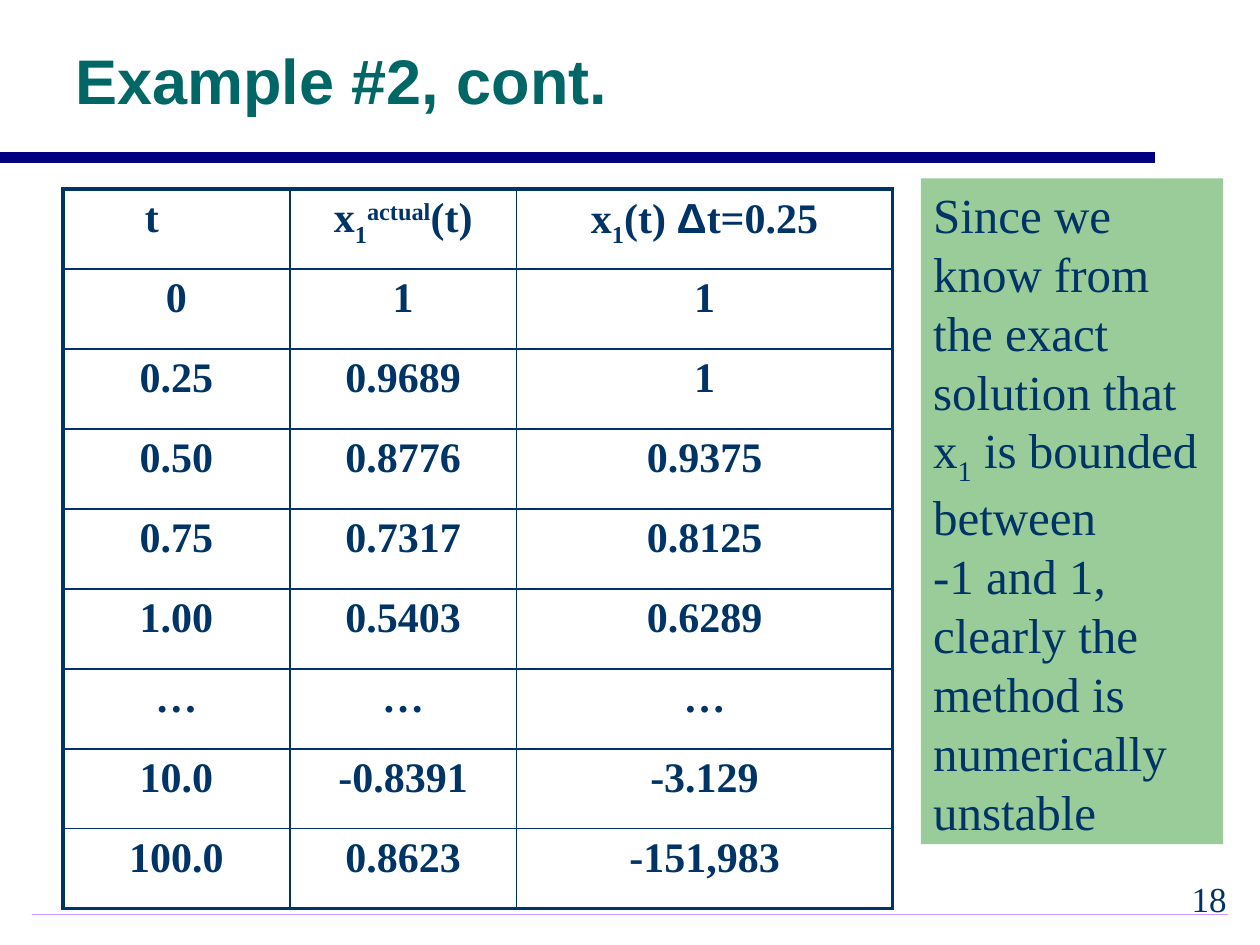
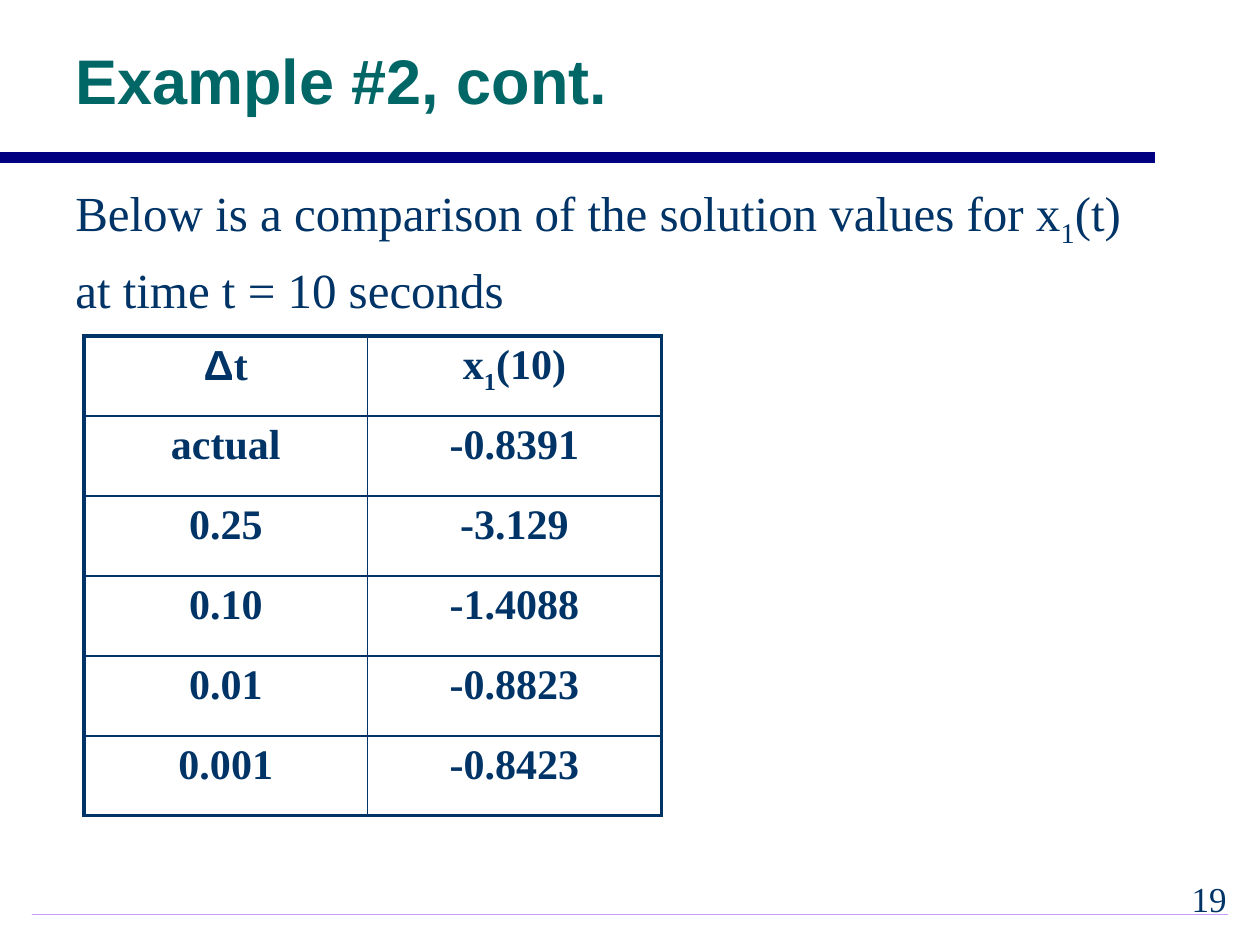
from lxml import etree
from pptx import Presentation
from pptx.dml.color import RGBColor
from pptx.enum.shapes import MSO_CONNECTOR, MSO_SHAPE
from pptx.enum.text import MSO_ANCHOR, PP_ALIGN
from pptx.oxml.ns import qn
from pptx.util import Inches, Pt

RECTANGLE = MSO_SHAPE.RECTANGLE
STRAIGHT = MSO_CONNECTOR.STRAIGHT
LEFT, CENTER, RIGHT = PP_ALIGN.LEFT, PP_ALIGN.CENTER, PP_ALIGN.RIGHT
TOP, MIDDLE = MSO_ANCHOR.TOP, MSO_ANCHOR.MIDDLE

INK = RGBColor(0x00, 0x33, 0x66)
TEAL = RGBColor(0x00, 0x66, 0x66)
NAVY = RGBColor(0x00, 0x00, 0x80)
LILAC = RGBColor(0xCC, 0x99, 0xFF)
PALE_LILAC = RGBColor(0xF3, 0xEB, 0xFF)
GREEN = RGBColor(0x99, 0xCC, 0x99)

SANS, SERIF = "Arial", "Times New Roman"
COLUMNS, ROWS = 120, 90
UNIT = Inches(10) / COLUMNS
TABLE_ROW = 7.62
THICK, THIN = 2.25, 1
SUB, SUPER = -25, 30

TITLE_BOX = (6, 1, 105, 14)
NUMBER_BOX = (93, 83, 25, 6)
FOOTER_BOX = (3, 87, 114, 0.12)
NOTE_BOX = (87.7, 17, 28.8, 63.4)
INTRO_BOX = (6, 16.8, 102.2, 12.4)

X1 = ["x", ("1", SUB)]
DELTA = ("Δ", 0, SANS)

SOLUTION_ROWS = [
    ["t\t", X1 + [("actual", SUPER), "(t)"], X1 + ["(t) ", DELTA, "t=0.25"]],
    ["0", "1", "1"],
    ["0.25", "0.9689", "1"],
    ["0.50", "0.8776", "0.9375"],
    ["0.75", "0.7317", "0.8125"],
    ["1.00", "0.5403", "0.6289"],
    ["…", "…", "…"],
    ["10.0", "-0.8391", "-3.129"],
    ["100.0", "0.8623", "-151,983"],
]
STEP_ROWS = [
    [[DELTA, "t"], X1 + ["(10)"]],
    ["actual", "-0.8391"],
    ["0.25", "-3.129"],
    ["0.10", "-1.4088"],
    ["0.01", "-0.8823"],
    ["0.001", "-0.8423"],
]
NOTE = ["Since we\nknow from\nthe exact\nsolution that\nx", ("1", SUB),
        " is bounded\nbetween\n-1 and 1,\nclearly the\nmethod is\nnumerically\nunstable"]
INTRO = [["Below is a comparison of the solution values for x", ("1", SUB), "(t)"],
         "at time t = 10 seconds"]


def grid(*lengths):
    return [round(length * UNIT) for length in lengths]


def write(frame, paragraphs, size=28, font=SERIF, color=INK, bold=False, align=LEFT,
          anchor=TOP, wrap=True, spacing=None, gap=0):
    frame.word_wrap = wrap
    frame.vertical_anchor = anchor
    for index, spans in enumerate(paragraphs):
        para = frame.add_paragraph() if index else frame.paragraphs[0]
        para.alignment = align
        if spacing:
            para.line_spacing = spacing
        if index:
            para.space_before = Pt(gap)
        for part in [spans] if isinstance(spans, str) else spans:
            text, baseline, face = ((part,) if isinstance(part, str) else part) + (0, font)[
                (1 if isinstance(part, str) else len(part)) - 1:]
            for number, line in enumerate(text.split("\n")):
                if number:
                    para.add_line_break()
                span = para.add_run()
                span.text = line
                span.font.size = Pt(size)
                span.font.name = face
                span.font.bold = bold
                span.font.color.rgb = color
                if baseline:
                    span.font._element.set("baseline", str(baseline * 1000))


def add_text(page, box, paragraphs, **style):
    write(page.shapes.add_textbox(*grid(*box)).text_frame, paragraphs, **style)


def add_rectangle(page, box):
    shape = page.shapes.add_shape(RECTANGLE, *grid(*box))
    shape.shadow.inherit = False
    shape.line.fill.background()
    return shape


def add_footer_rule(page, box):
    rule = add_rectangle(page, box)
    rule.fill.gradient()
    for stop, color in zip(rule.fill.gradient_stops, (LILAC, PALE_LILAC)):
        stop.color.rgb = color
    gradient = rule._element.spPr.find(qn("a:gradFill"))
    gradient.remove(gradient.find(qn("a:lin")))
    center = etree.SubElement(gradient, qn("a:path"), {"path": "rect"})
    etree.SubElement(center, qn("a:fillToRect"), dict.fromkeys("ltrb", "50000"))


def add_title_band(page):
    band = page.shapes.add_connector(STRAIGHT, *grid(0, 15, 110, 15))
    band.line.color.rgb = NAVY
    band.line.width = Pt(6)
    etree.SubElement(band._element.spPr, qn("a:effectLst"))


def add_page(deck, title, number):
    page = deck.slides.add_slide(deck.slide_layouts[6])
    add_footer_rule(page, FOOTER_BOX)
    add_title_band(page)
    add_text(page, TITLE_BOX, [title], size=36, font=SANS, color=TEAL, bold=True,
             anchor=MIDDLE, spacing=0.9)
    add_text(page, NUMBER_BOX, [str(number)], size=20, align=RIGHT)
    return page


def set_borders(cell, widths):
    properties = cell._tc.get_or_add_tcPr()
    for index, (side, width) in enumerate(widths.items()):
        border = etree.Element(qn(f"a:ln{side}"), {"w": str(Pt(width))})
        fill = etree.SubElement(border, qn("a:solidFill"))
        etree.SubElement(fill, qn("a:srgbClr"), {"val": str(INK)})
        properties.insert(index, border)


def add_value_table(page, left, top, widths, rows):
    box = grid(left, top, sum(widths), TABLE_ROW * len(rows))
    table = page.shapes.add_table(len(rows), len(widths), *box).table
    table.first_row = table.horz_banding = False
    for column, width in zip(table.columns, grid(*widths)):
        column.width = width
    last_row, last_column = len(rows) - 1, len(widths) - 1
    for r, values in enumerate(rows):
        table.rows[r].height = grid(TABLE_ROW)[0]
        for c, value in enumerate(values):
            cell = table.cell(r, c)
            cell.fill.background()
            write(cell.text_frame, [value], size=24, bold=True, align=CENTER)
            outer = {"L": c == 0, "R": c == last_column, "T": r == 0, "B": r == last_row}
            set_borders(cell, {side: THICK if edge else THIN for side, edge in outer.items()})


def add_note(page, box, spans):
    note = add_rectangle(page, box)
    note.fill.solid()
    note.fill.fore_color.rgb = GREEN
    write(note.text_frame, [spans], wrap=False)


def build_solution_page(deck):
    page = add_page(deck, "Example #2, cont.", 18)
    add_value_table(page, 6, 18, (21.6, 21.6, 35.8), SOLUTION_ROWS)
    add_note(page, NOTE_BOX, NOTE)


def build_step_page(deck):
    page = add_page(deck, "Example #2, cont.", 19)
    add_value_table(page, 8, 32, (27, 28), STEP_ROWS)
    add_text(page, INTRO_BOX, INTRO, wrap=False, gap=5.6)


def main():
    deck = Presentation()
    deck.slide_width, deck.slide_height = grid(COLUMNS, ROWS)
    build_solution_page(deck)
    build_step_page(deck)
    deck.save("out.pptx")


if __name__ == "__main__":
    main()
